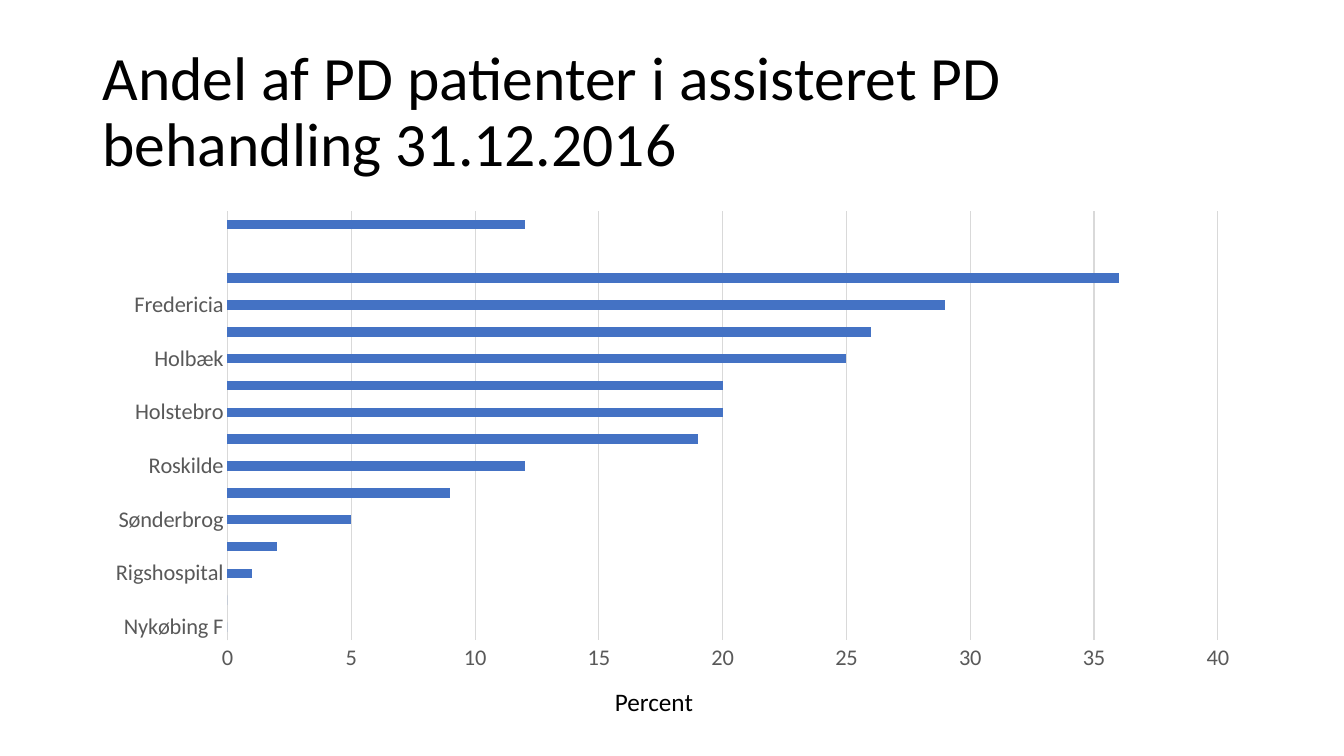
import pptx
import pptx.chart.data
import pptx.dml.color
import pptx.enum.chart
import pptx.enum.text
import pptx.util
from pptx.util import Inches

THEME = {
    "font": "Calibri",
    "text": pptx.dml.color.RGBColor.from_string("000000"),
    "label": pptx.dml.color.RGBColor.from_string("595959"),
    "grid": pptx.dml.color.RGBColor.from_string("D9D9D9"),
    "bar": pptx.dml.color.RGBColor.from_string("4472C4"),
    "title_size": pptx.util.Pt(44),
    "caption_size": pptx.util.Pt(18),
    "label_size": pptx.util.Pt(16),
    "chart_size": pptx.util.Pt(10),
    "hairline": pptx.util.Pt(0.75),
}


def style_font(font, size, color):
    font.name = THEME["font"]
    font.size = size
    font.color.rgb = color


def add_text(slide, words, left, top, width, height, size, wrap):
    frame = slide.shapes.add_textbox(
        Inches(left), Inches(top), Inches(width), Inches(height)
    ).text_frame
    frame.word_wrap = wrap
    run = frame.paragraphs[0].add_run()
    run.text = words
    style_font(run.font, size, THEME["text"])
    return frame


presentation = pptx.Presentation()
presentation.slide_width = Inches(13.33)
presentation.slide_height = Inches(7.5)
slide = presentation.slides.add_slide(presentation.slide_layouts[6])

title = add_text(
    slide, "Andel af PD patienter i assisteret PD behandling 31.12.2016",
    0.92, 0.4, 11.5, 1.45, THEME["title_size"], True,
)
title.vertical_anchor = pptx.enum.text.MSO_ANCHOR.MIDDLE
title.paragraphs[0].line_spacing = 0.9

assisted_share = [
    ("Nykøbing F", 0), ("Hillerød", 0), ("Rigshospital", 1), ("Herlev", 2),
    ("Sønderbrog", 5), ("Esbjerg", 9), ("Roskilde", 12), ("Aalborg", 19),
    ("Holstebro", 20), ("Aarhus", 20), ("Holbæk", 25), ("Viborg", 26),
    ("Fredericia", 29), ("Odense", 36), ("", None), ("Danmark", 12),
]
share_data = pptx.chart.data.CategoryChartData(number_format="0")
share_data.categories = [hospital for hospital, share in assisted_share]
share_data.add_series("Series 1", [share for hospital, share in assisted_share])
chart = slide.shapes.add_chart(
    pptx.enum.chart.XL_CHART_TYPE.BAR_CLUSTERED,
    Inches(0.92), Inches(2), Inches(11.5), Inches(4.76), share_data,
).chart
chart.has_title = False
chart.has_legend = False
style_font(chart.font, THEME["chart_size"], THEME["text"])

bars = chart.plots[0]
bars.gap_width = 182
bars.vary_by_categories = False
share_series = bars.series[0]
share_series.invert_if_negative = False
share_series.format.fill.solid()
share_series.format.fill.fore_color.rgb = THEME["bar"]

hospitals = chart.category_axis
percent = chart.value_axis
for axis in (hospitals, percent):
    axis.major_tick_mark = pptx.enum.chart.XL_TICK_MARK.NONE
    axis.minor_tick_mark = pptx.enum.chart.XL_TICK_MARK.NONE
    style_font(axis.tick_labels.font, THEME["label_size"], THEME["label"])

hospitals.has_major_gridlines = False
percent.has_major_gridlines = True
for line in (hospitals.format.line, percent.major_gridlines.format.line):
    line.color.rgb = THEME["grid"]
    line.width = THEME["hairline"]

percent.format.line.fill.background()
percent.minimum_scale = 0
percent.maximum_scale = 40
percent.major_unit = 5
percent.tick_labels.number_format = "0"
percent.tick_labels.number_format_is_linked = False

caption = add_text(
    slide, "Percent", 6, 6.76, 0.99, 0.4, THEME["caption_size"], False
)
caption.auto_size = pptx.enum.text.MSO_AUTO_SIZE.SHAPE_TO_FIT_TEXT

presentation.save("out.pptx")
